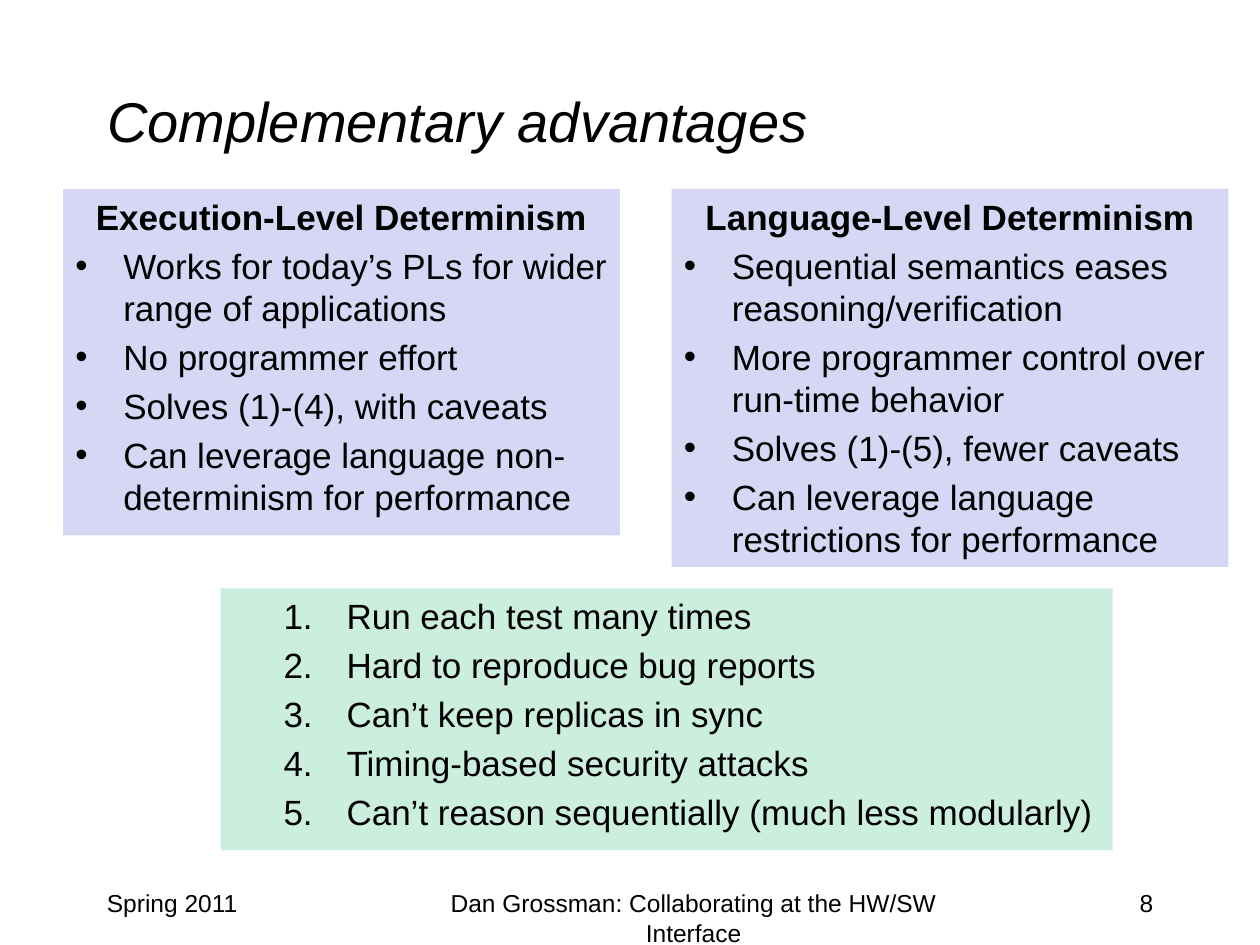
from pptx import Presentation
from pptx.dml.color import RGBColor as Color
from pptx.enum.shapes import MSO_SHAPE as Shape
from pptx.enum.text import MSO_ANCHOR as Anchor, PP_ALIGN as Align
from pptx.oxml.ns import qn
from pptx.util import Inches, Pt
from lxml.etree import SubElement

COLORS = {"text": "000000", "approach": "D6D6F5", "problems": "CCEEDF"}


class SlideBuilder:
    """Hold the style and the slide, and add each kind of element."""

    font_name = "Arial"
    body_size = 20
    footer_size = 14

    def __init__(self, slide):
        self.slide = slide

    def style(self, para, size, align=Align.LEFT, bold=False, italic=False):
        para.alignment = align
        font = para.font
        font.name, font.size = self.font_name, Pt(size)
        font.bold, font.italic = bold, italic
        font.color.rgb = Color.from_string(COLORS["text"])

    def title(self, text, left, top, width, height):
        title = self.slide.shapes.title
        title.left, title.top = Inches(left), Inches(top)
        title.width, title.height = Inches(width), Inches(height)
        title.text_frame.text = text
        title.text_frame.vertical_anchor = Anchor.MIDDLE
        self.style(title.text_frame.paragraphs[0], 32, italic=True)

    def panel(self, color, left, top, width, height):
        box = self.slide.shapes.add_shape(
            Shape.RECTANGLE, Inches(left), Inches(top), Inches(width), Inches(height))
        box.shadow.inherit = False
        box.fill.solid()
        box.fill.fore_color.rgb = Color.from_string(COLORS[color])
        box.line.fill.background()
        box.text_frame.word_wrap = True
        box.text_frame.vertical_anchor = Anchor.TOP
        return box.text_frame

    def list_item(self, para, text, margin, hanging, tag, **marker):
        para.text = text
        para.space_before = Pt(self.body_size * 0.2)
        properties = para._p.get_or_add_pPr()
        properties.set("marL", str(Inches(margin)))
        properties.set("indent", str(-Inches(hanging)))
        SubElement(properties, qn("a:buFont"), typeface=self.font_name)
        SubElement(properties, qn(tag), **marker)
        self.style(para, self.body_size)

    def approach(self, heading, items, left, height):
        frame = self.panel("approach", left, 1.5, 4.42, height)
        para = frame.paragraphs[0]
        para.text = heading
        para.space_before = Pt(self.body_size * 0.2)
        self.style(para, self.body_size, Align.CENTER, bold=True)
        for item in items:
            self.list_item(frame.add_paragraph(), item, 0.38, 0.38, "a:buChar", char="•")

    def problems(self, items, left, top, width, height):
        frame = self.panel("problems", left, top, width, height)
        frame.margin_left = 0
        for index, item in enumerate(items):
            para = frame.add_paragraph() if index else frame.paragraphs[0]
            para.level = 1
            self.list_item(para, item, 1, 0.5, "a:buAutoNum", type="arabicPeriod")

    def footer(self, text, left, width, align):
        box = self.slide.shapes.add_textbox(
            Inches(left), Inches(7), Inches(width), Inches(0.5))
        box.text_frame.word_wrap = True
        box.text_frame.text = text
        self.style(box.text_frame.paragraphs[0], self.footer_size, align)


def main():
    deck = Presentation()
    deck.slide_width, deck.slide_height = Inches(10), Inches(7.5)
    page = SlideBuilder(deck.slides.add_slide(deck.slide_layouts[5]))

    page.title("Complementary advantages", 0.75, 0.33, 8.5, 1.25)
    page.approach("Execution-Level Determinism", [
        "Works for today’s PLs for wider range of applications",
        "No programmer effort",
        "Solves (1)-(4), with caveats",
        "Can leverage language non-determinism for performance",
    ], 0.5, 2.75)
    page.approach("Language-Level Determinism", [
        "Sequential semantics eases reasoning/verification",
        "More programmer control over run-time behavior",
        "Solves (1)-(5), fewer caveats",
        "Can leverage language restrictions for performance",
    ], 5.33, 3)
    page.problems([
        "Run each test many times",
        "Hard to reproduce bug reports",
        "Can’t keep replicas in sync",
        "Timing-based security attacks",
        "Can’t reason sequentially (much less modularly)",
    ], 1.75, 4.67, 7.08, 2.08)
    page.footer("Spring 2011", 0.75, 2.08, Align.LEFT)
    page.footer("Dan Grossman: Collaborating at the HW/SW Interface", 3.17, 4.67, Align.CENTER)
    page.footer("8", 7.17, 2.08, Align.RIGHT)

    deck.save("out.pptx")


if __name__ == "__main__":
    main()
